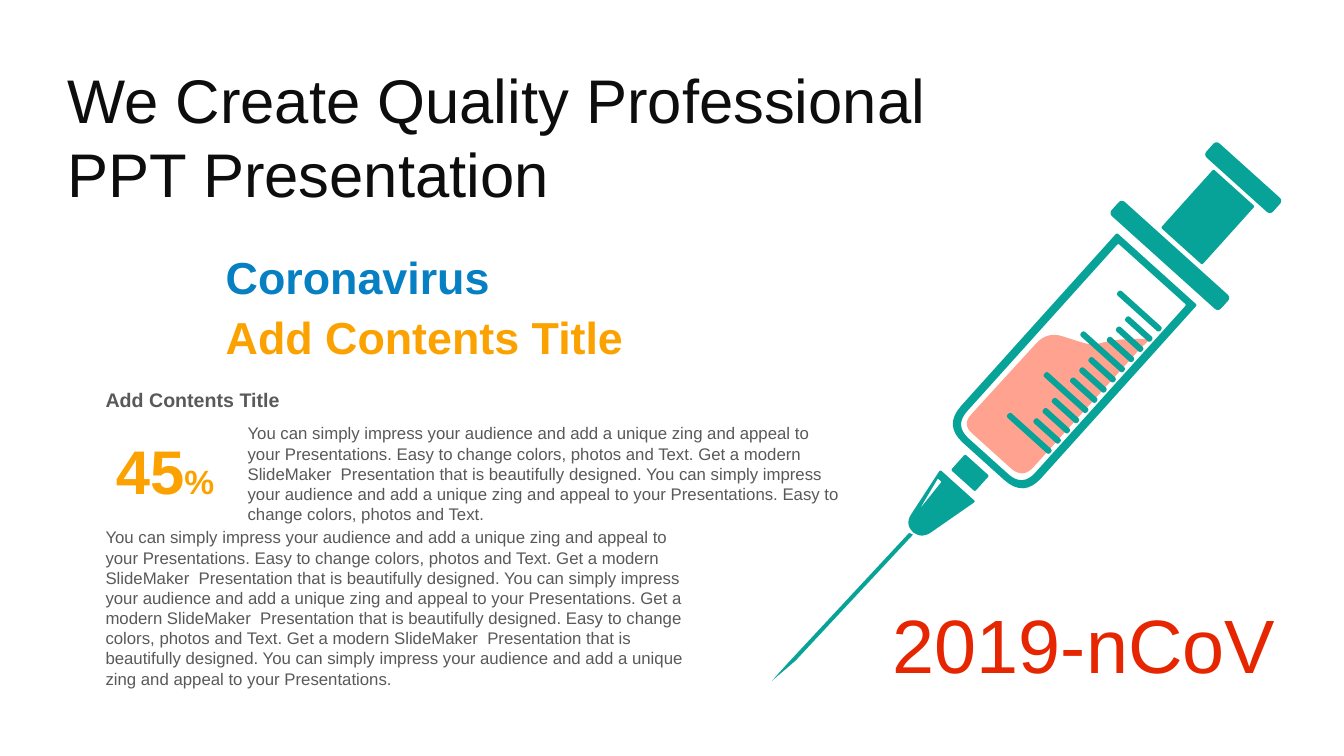
from math import cos, radians, sin

from pptx import Presentation
from pptx.dml.color import RGBColor
from pptx.enum.text import MSO_ANCHOR, PP_ALIGN
from pptx.util import Cm, Pt

MIDDLE = MSO_ANCHOR.MIDDLE
TOP = MSO_ANCHOR.TOP
CENTER = PP_ALIGN.CENTER

COLORS = {
    "ink": "0D0D0D",
    "body": "595959",
    "blue": "0680C3",
    "orange": "FBA200",
    "red": "E62601",
    "teal": "07A398",
    "liquid": "FFA290",
}
FONT = "Arial"

IMPRESS = ("You can simply impress your audience and add a unique zing and appeal "
           "to your Presentations.")
EASY = "Easy to change colors, photos and Text."
MODERN = "Get a modern SlideMaker  Presentation that is beautifully designed."

SYRINGE_TILT = radians(48)
SYRINGE_UNIT = Cm(2.54)
TICK_COUNT = 13
TICK_STEP = 0.136


def style_run(run, size, color, bold=False):
    run.font.name = FONT
    run.font.size = Pt(size)
    run.font.bold = bold
    run.font.color.rgb = RGBColor.from_string(COLORS[color])


def add_text(page, box, text, size, color, bold=False, anchor=TOP):
    """Write one text box; each line of text becomes a paragraph."""
    shape = page.shapes.add_textbox(*(Cm(length) for length in box))
    frame = shape.text_frame
    frame.word_wrap = True
    frame.vertical_anchor = anchor
    frame.text = text
    for para in frame.paragraphs:
        for run in para.runs:
            style_run(run, size, color, bold)
    return frame


def add_title(page, box):
    frame = add_text(page, box, "We Create Quality Professional\nPPT Presentation",
                     44, "ink", anchor=MIDDLE)
    frame.margin_left = frame.margin_right = Cm(0.1)
    frame.margin_top = frame.margin_bottom = 0


def add_headings(page, left, top):
    add_text(page, (left, top, 8.6, 1.62), "Coronavirus", 32, "blue", True)
    add_text(page, (left, top + 1.5, 12, 1.62), "Add Contents Title", 32, "orange", True)


def add_contents(page, left, top):
    add_text(page, (left, top, 7, 0.86), "Add Contents Title", 14, "body", True)
    frame = add_text(page, (left, top + 1.12, 3.5, 2.13), "45", 44, "orange", True, MIDDLE)
    para = frame.paragraphs[0]
    para.alignment = CENTER
    percent = para.add_run()
    percent.text = "%"
    style_run(percent, 24, "orange", True)
    add_text(page, (left + 3.58, top + 0.89, 15.52, 2.82),
             " ".join([IMPRESS, EASY, MODERN, IMPRESS, EASY]), 12, "body")
    add_text(page, (left, top + 3.51, 15.44, 4.37),
             " ".join([IMPRESS, EASY, MODERN, IMPRESS, MODERN, EASY, MODERN, IMPRESS]),
             12, "body")


def bar(start, end, near, far, start_radius, end_radius):
    """Corners (along, across, radius) of a bar lying along the syringe."""
    return [(start, near, start_radius), (start, far, start_radius),
            (end, far, end_radius), (end, near, end_radius)]


def toward(corner, other, distance):
    along, across = other[0] - corner[0], other[1] - corner[1]
    share = distance / (along ** 2 + across ** 2) ** 0.5
    return corner[0] + along * share, corner[1] + across * share


def round_corners(corners, steps=8):
    """Replace each corner by a short curve that reaches its radius both ways."""
    points = []
    for index, corner in enumerate(corners):
        if not corner[2]:
            points.append(corner[:2])
            continue
        first = toward(corner, corners[index - 1], corner[2])
        last = toward(corner, corners[(index + 1) % len(corners)], corner[2])
        for step in range(steps + 1):
            t = step / steps
            points.append(tuple((1 - t) ** 2 * a + 2 * t * (1 - t) * b + t ** 2 * c
                                for a, b, c in zip(first, corner, last)))
    return points


def add_outline(page, tip, contours, color):
    """Draw contours given in units along and across the syringe from its tip."""
    def place(point):
        along, across = point
        x = along * cos(SYRINGE_TILT) + across * sin(SYRINGE_TILT)
        y = across * cos(SYRINGE_TILT) - along * sin(SYRINGE_TILT)
        return tip[0] + x * SYRINGE_UNIT, tip[1] + y * SYRINGE_UNIT

    builder = None
    for contour in contours:
        start, *rest = [place(point) for point in round_corners(contour)]
        if builder is None:
            builder = page.shapes.build_freeform(*start)
        else:
            builder.move_to(*start)
        builder.add_line_segments(rest, close=True)
    shape = builder.convert_to_shape()
    shape.shadow.inherit = False
    shape.fill.solid()
    shape.fill.fore_color.rgb = RGBColor.from_string(COLORS[color])
    shape.line.fill.background()


def add_syringe(page, left, bottom):
    """Draw the syringe with the needle's tip at the given point."""
    tip = Cm(left), Cm(bottom)
    liquid = [(3.15, -0.3, 0.13), (3.15, 0.51, 0.16), (4.88, 0.51, 0), (5.03, 0.52, 0),
              (4.8, 0.27, 0.15), (4.59, 0.13, 0.1), (4.4, -0.29, 0.16)]
    needle = [(0, 0, 0), (0.22, 0, 0), (2.0, 0.03, 0), (2.01, 0.07, 0), (0.3, 0.04, 0)]
    hub = [(2.67, -0.16, 0.02), (2.67, 0.31, 0.02), (2.03, 0.16, 0.12), (2.03, -0.06, 0.12)]
    hub_gleam = [(2.59, -0.12, 0.01), (2.59, -0.07, 0.01), (2.24, -0.05, 0)]
    neck = bar(2.74, 2.95, -0.08, 0.24, 0.02, 0.02)
    barrel = bar(3.02, 5.59, -0.43, 0.64, 0.26, 0.02)
    barrel_inside = bar(3.09, 5.52, -0.35, 0.56, 0.19, 0.02)
    flange = bar(5.68, 5.87, -0.62, 0.84, 0.05, 0.05)
    plunger = bar(5.92, 6.7, -0.14, 0.41, 0.02, 0.02)
    thumb_rest = bar(6.74, 6.93, -0.31, 0.58, 0.05, 0.05)
    ticks = []
    for index in range(TICK_COUNT):
        middle = 3.53 + index * TICK_STEP
        near = 0.2 if index % 4 else -0.03
        ticks.append(bar(middle - 0.03, middle + 0.03, near, 0.54, 0.03, 0.03))
    add_outline(page, tip, [liquid], "liquid")
    add_outline(page, tip, [needle, hub, hub_gleam, neck, barrel, barrel_inside,
                            flange, plunger, thumb_rest, *ticks], "teal")


def main():
    deck = Presentation()
    deck.slide_width, deck.slide_height = Cm(33.87), Cm(19.05)
    page = deck.slides.add_slide(deck.slide_layouts[6])
    add_syringe(page, 19.46, 17.15)
    add_contents(page, 2.41, 9.65)
    add_headings(page, 5.44, 6.17)
    add_title(page, (1.6, 1.55, 27.18, 3.76))
    add_text(page, (22.25, 14.94, 11.81, 2.57), "2019-nCoV", 54, "red")
    deck.save("out.pptx")


if __name__ == "__main__":
    main()
